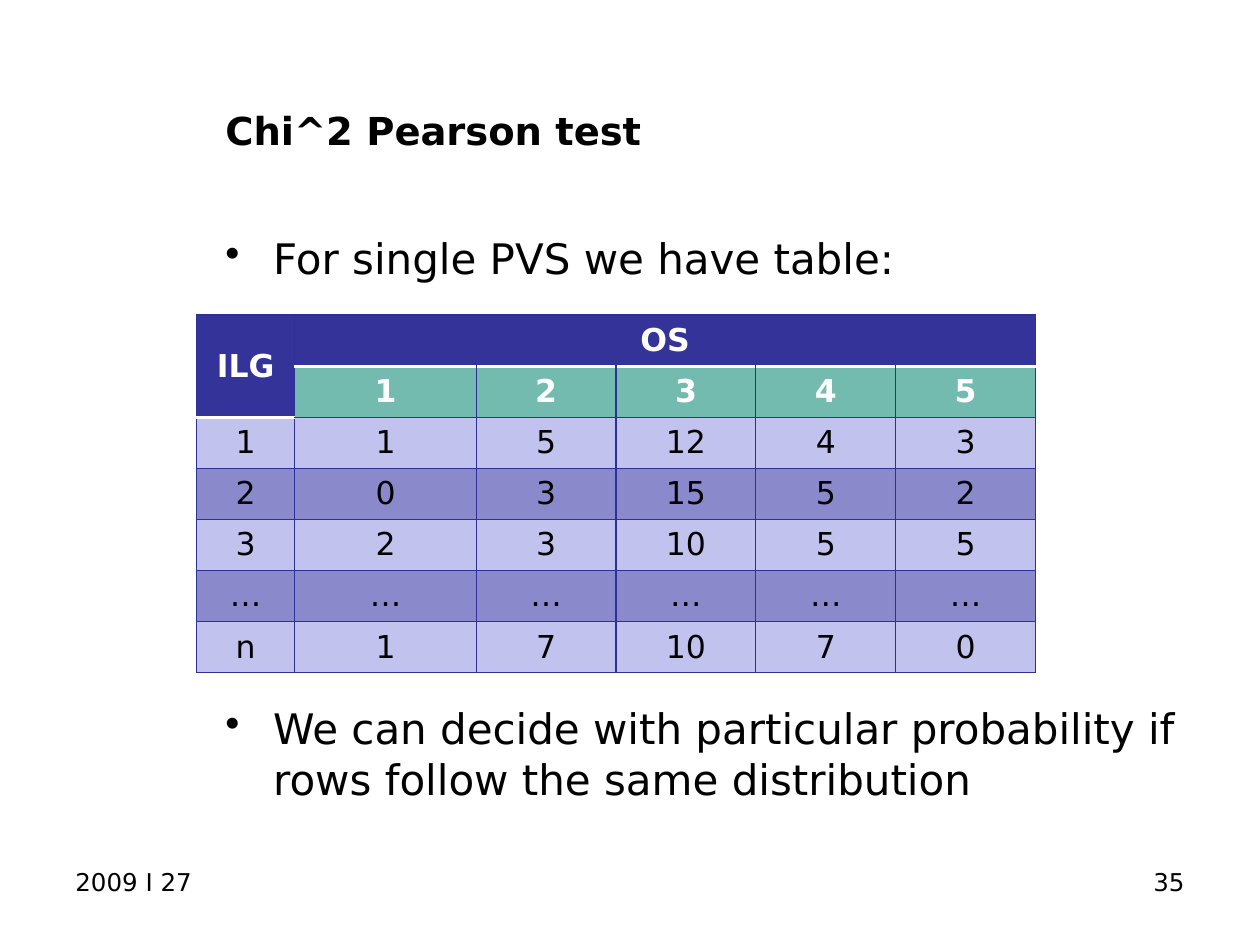
"""Build a slide with a chi-squared contingency table between two bullets."""
from lxml.etree import SubElement
from pptx import Presentation
from pptx.dml.color import RGBColor
from pptx.enum.text import MSO_ANCHOR, PP_ALIGN
from pptx.oxml import parse_xml
from pptx.oxml.ns import nsdecls, qn
from pptx.util import Inches, Pt

FONT = "DejaVu Sans"
BLACK, WHITE, GRID = "000000", "FFFFFF", "2F2F98"
NAVY, GREEN, LIGHT, DARK = "333399", "74BBAF", "C2C2EE", "8989CC"


def color(value):
    return RGBColor.from_string(value)


def write(frame, text, size, ink=BLACK, bold=False, align=PP_ALIGN.LEFT, bullet=False):
    paragraph = frame.paragraphs[0]
    paragraph.text = text
    paragraph.alignment = align
    if bullet:
        properties = paragraph._p.get_or_add_pPr()
        properties.set("marL", str(Inches(0.38)))
        properties.set("indent", str(Inches(-0.38)))
        SubElement(properties, qn("a:buChar"), char="•")
    font = paragraph.runs[0].font
    for name, value in {"name": FONT, "size": Pt(size), "bold": bold}.items():
        setattr(font, name, value)
    font.color.rgb = color(ink)


presentation = Presentation()
presentation.slide_width, presentation.slide_height = Inches(10), Inches(7.5)
slide = presentation.slides.add_slide(presentation.slide_layouts[6])

texts = [
    ("Chi^2 Pearson test", (1.69, 0.52, 7.81, 1.03), MSO_ANCHOR.MIDDLE,
     {"size": 22, "bold": True}),
    ("For single PVS we have table:", (1.69, 1.8, 7.81, 0.6), MSO_ANCHOR.TOP,
     {"size": 24, "bullet": True}),
    ("We can decide with particular probability if rows follow the same distribution",
     (1.69, 5.53, 7.81, 1), MSO_ANCHOR.TOP, {"size": 24, "bullet": True}),
    ("2009 I 27", (0.5, 6.83, 2.33, 0.52), MSO_ANCHOR.TOP, {"size": 14}),
    ("35", (7.17, 6.83, 2.33, 0.52), MSO_ANCHOR.TOP,
     {"size": 14, "align": PP_ALIGN.RIGHT}),
]
for text, place, anchor, formats in texts:
    frame = slide.shapes.add_textbox(*map(Inches, place)).text_frame
    frame.word_wrap = True
    frame.vertical_anchor = anchor
    write(frame, text, **formats)

counts = [
    ["ILG", "OS", "", "", "", ""],
    ["", "1", "2", "3", "4", "5"],
    ["1", "1", "5", "12", "4", "3"],
    ["2", "0", "3", "15", "5", "2"],
    ["3", "2", "3", "10", "5", "5"],
    ["…", "…", "…", "…", "…", "…"],
    ["n", "1", "7", "10", "7", "0"],
]
column_widths = [0.78, 1.44] + [1.11] * 4
row_fills = [NAVY, GREEN] + [LIGHT, DARK] * 2 + [LIGHT]
table = slide.shapes.add_table(
    len(counts), len(column_widths),
    Inches(1.56), Inches(2.5), Inches(6.67), Inches(2.84)).table
for column, width in zip(table.columns, column_widths):
    column.width = Inches(width)

for r, values in enumerate(counts):
    for c, value in enumerate(values):
        cell = table.cell(r, c)
        header = r < 2
        cell.vertical_anchor = MSO_ANCHOR.MIDDLE
        cell.fill.solid()
        cell.fill.fore_color.rgb = color(NAVY if header and c == 0 else row_fills[r])
        if value:
            write(cell.text_frame, value, 18, WHITE if header else BLACK,
                  header, PP_ALIGN.CENTER)
        header_end = 2 if c == 0 else 1
        white_sides = {"T": r == header_end, "B": r < header_end}
        for position, side in enumerate("LRTB"):
            white = white_sides.get(side, False)
            cell._tc.get_or_add_tcPr().insert(position, parse_xml(
                f'<a:ln{side} {nsdecls("a")} w="{Pt(2 if white else 0.75)}"><a:solidFill>'
                f'<a:srgbClr val="{WHITE if white else GRID}"/></a:solidFill></a:ln{side}>'))

table.cell(0, 0).merge(table.cell(1, 0))
table.cell(0, 1).merge(table.cell(0, 5))

presentation.save("out.pptx")
